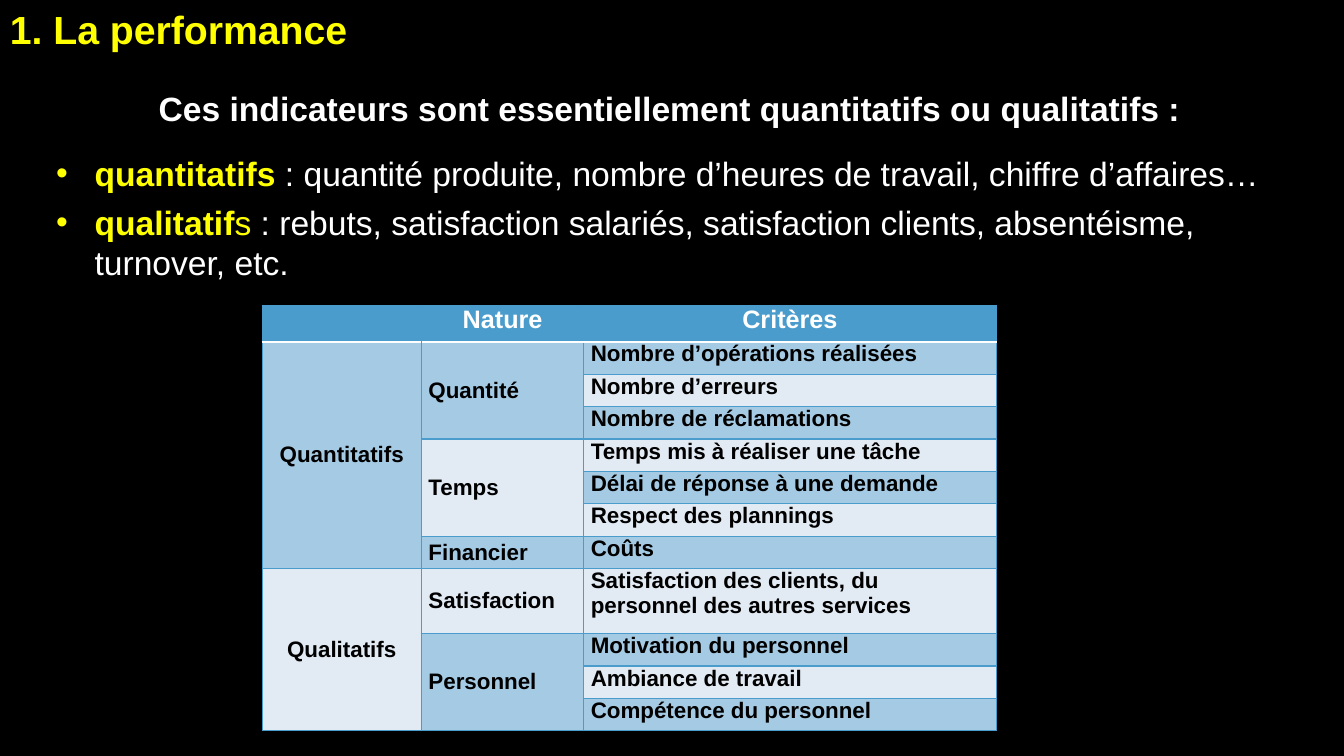
from lxml import etree
from pptx import Presentation
from pptx.dml.color import RGBColor
from pptx.enum.text import MSO_ANCHOR, PP_ALIGN
from pptx.oxml.ns import qn
from pptx.util import Inches, Pt

CENTER, LEFT = PP_ALIGN.CENTER, PP_ALIGN.LEFT
MIDDLE, TOP = MSO_ANCHOR.MIDDLE, MSO_ANCHOR.TOP

COLORS = {"background": "000000", "yellow": "FFFF00", "white": "FFFFFF",
          "black": "000000", "accent": "4A9CCC", "band": "A5CAE3", "pale": "E2EAF3"}
FONT = "Arial"

# Content: each run is (text, colour, bold)
TITLE = [{"runs": [("1. La performance", "yellow", True)], "after": 3}]
INDICATORS = [
    {"runs": [("Ces indicateurs sont essentiellement quantitatifs ou qualitatifs :", "white", True)],
     "align": CENTER, "before": 6, "after": 12},
    {"runs": [("quantitatifs", "yellow", True),
              (" : quantité produite, nombre d’heures de travail, chiffre d’affaires…", "white", False)],
     "before": 6, "bullet": True},
    {"runs": [("qualitatif", "yellow", True), ("s", "yellow", False),
              (" : rebuts, satisfaction salariés, satisfaction clients, absentéisme, turnover, etc.",
               "white", False)],
     "before": 6, "after": 12, "bullet": True},
]
HEADERS = ["", "Nature", "Critères"]
CRITERIA = {
    "Quantitatifs": {
        "Quantité": ["Nombre d’opérations réalisées", "Nombre d’erreurs", "Nombre de réclamations"],
        "Temps": ["Temps mis à réaliser une tâche", "Délai de réponse à une demande",
                  "Respect des plannings"],
        "Financier": ["Coûts"],
    },
    "Qualitatifs": {
        "Satisfaction": ["Satisfaction des clients, du personnel des autres services"],
        "Personnel": ["Motivation du personnel", "Ambiance de travail", "Compétence du personnel"],
    },
}
TABLE_BOX = (2.6, 3.03, 7.28, 4.22)
COLUMN_WIDTHS = (1.58, 1.61, 4.09)
HEADER_HEIGHT = 0.36
TALL_ROW = 8  # holds two lines


def apply_format(target, values):
    for name, value in values.items():
        setattr(target, name, value)


def fill_paragraph(paragraph, item, size):
    apply_format(paragraph, {"alignment": item.get("align", LEFT),
                             "space_before": Pt(item.get("before", 0)),
                             "space_after": Pt(item.get("after", 0))})
    if item.get("bullet"):
        properties = paragraph._p.get_or_add_pPr()
        properties.set("marL", str(Inches(0.38)))
        properties.set("indent", str(Inches(-0.38)))
        etree.SubElement(properties, qn("a:buFont")).set("typeface", FONT)
        etree.SubElement(properties, qn("a:buChar")).set("char", "•")
    for text, color, bold in item["runs"]:
        run = paragraph.add_run()
        run.text = text
        apply_format(run.font, {"name": FONT, "size": Pt(size), "bold": bold})
        run.font.color.rgb = RGBColor.from_string(COLORS[color])


def add_text(slide, box, items, size):
    frame = slide.shapes.add_textbox(*map(Inches, box)).text_frame
    frame.word_wrap = True
    for index, item in enumerate(items):
        paragraph = frame.add_paragraph() if index else frame.paragraphs[0]
        fill_paragraph(paragraph, item, size)


def set_borders(cell, borders):
    properties = cell._tc.get_or_add_tcPr()
    for side in "LRTB":
        color, width = borders.get(side, ("accent", 1))
        line = etree.SubElement(properties, qn("a:ln" + side), w=str(Pt(width)))
        solid = etree.SubElement(line, qn("a:solidFill"))
        etree.SubElement(solid, qn("a:srgbClr"), val=COLORS[color])


def style_cell(cell, row, column):
    borders = {}
    if row == 0:
        borders["B"] = ("white", 1.5)
    elif row == 1 and column > 0:
        borders["T"] = ("white", 1.5)
    if row and column == 0:
        borders["R"] = ("accent", 1.5)
    set_borders(cell, borders)
    apply_format(cell, {"margin_left": Inches(0.07), "margin_right": Inches(0.07),
                        "margin_top": 0, "margin_bottom": 0,
                        "vertical_anchor": MIDDLE if row and column < 2 else TOP})
    cell.fill.solid()
    fill = "accent" if row == 0 else "band" if row % 2 else "pale"
    cell.fill.fore_color.rgb = RGBColor.from_string(COLORS[fill])


def write_cell(cell, text, **layout):
    fill_paragraph(cell.text_frame.paragraphs[0], {"runs": [(text, "black", True)], **layout}, 16)


def add_criteria_table(slide):
    row_count = 1 + sum(len(names) for natures in CRITERIA.values() for names in natures.values())
    table = slide.shapes.add_table(row_count, len(HEADERS), *map(Inches, TABLE_BOX)).table
    for column, width in zip(table.columns, COLUMN_WIDTHS):
        column.width = Inches(width)
    unit = (TABLE_BOX[3] - HEADER_HEIGHT) / row_count  # the tall row counts twice
    for index, table_row in enumerate(table.rows):
        height = HEADER_HEIGHT if index == 0 else unit * (2 if index == TALL_ROW else 1)
        table_row.height = Inches(height)
        for column in range(len(HEADERS)):
            style_cell(table.cell(index, column), index, column)

    # Header row
    for column, text in enumerate(HEADERS):
        if text:
            fill_paragraph(table.cell(0, column).text_frame.paragraphs[0],
                           {"runs": [(text, "white", True)], "align": CENTER}, 18)

    # Groups, natures and criteria
    row = 1
    for group, natures in CRITERIA.items():
        group_row = row
        for nature, names in natures.items():
            write_cell(table.cell(row, 1), nature)
            if len(names) > 1:
                table.cell(row, 1).merge(table.cell(row + len(names) - 1, 1))
            for name in names:
                write_cell(table.cell(row, 2), name, before=1, after=1)
                row += 1
        write_cell(table.cell(group_row, 0), group, align=CENTER)
        table.cell(group_row, 0).merge(table.cell(row - 1, 0))


def main():
    presentation = Presentation()
    apply_format(presentation, {"slide_width": Inches(13.33), "slide_height": Inches(7.5)})
    slide = presentation.slides.add_slide(presentation.slide_layouts[6])
    slide.background.fill.solid()
    slide.background.fill.fore_color.rgb = RGBColor.from_string(COLORS["background"])

    add_text(slide, (0, 0, 10.94, 0.57), TITLE, 28)
    add_text(slide, (0.46, 0.82, 12.36, 2.05), INDICATORS, 24)
    add_criteria_table(slide)
    presentation.save("out.pptx")


if __name__ == "__main__":
    main()
